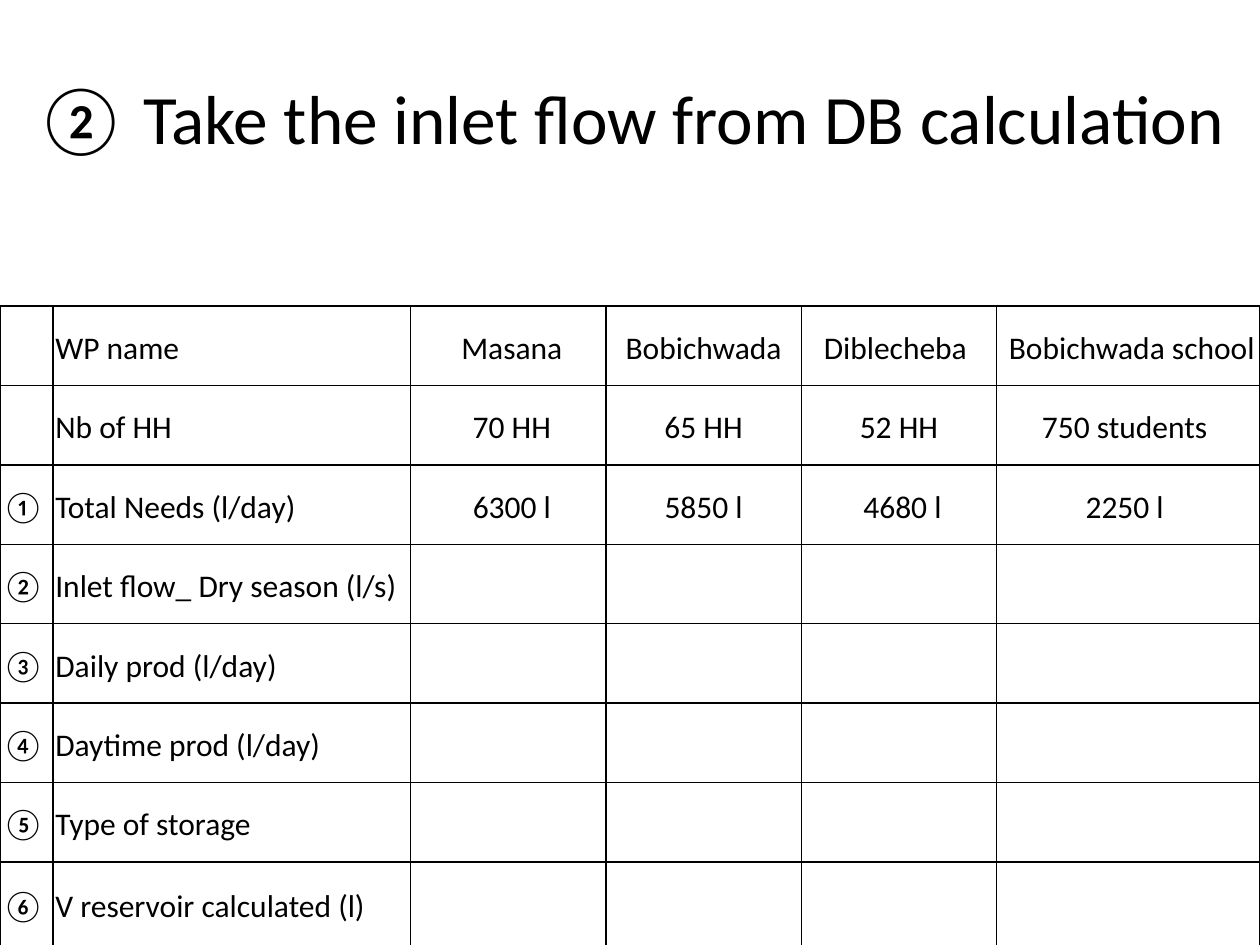
from dataclasses import dataclass

from lxml import etree
from pptx import Presentation
from pptx.dml.color import RGBColor
from pptx.enum.text import MSO_ANCHOR, MSO_AUTO_SIZE, PP_ALIGN
from pptx.oxml.ns import qn
from pptx.util import Inches, Pt

LEFT, CENTER = PP_ALIGN.LEFT, PP_ALIGN.CENTER
MIDDLE = MSO_ANCHOR.MIDDLE
NO_AUTOFIT = MSO_AUTO_SIZE.NONE
TITLE_ONLY = 5


@dataclass(frozen=True)
class Theme:
    font: str = "Calibri"
    ink: str = "000000"
    title_size: float = 39.6
    cell_size: float = 18
    border: float = 1


@dataclass(frozen=True)
class Row:
    number: str
    label: str
    values: tuple[str, ...] = ("",) * 4
    height: float = 0.63

    @property
    def texts(self) -> tuple[str, ...]:
        return (self.number, self.label, *self.values)


THEME = Theme()
COLUMN_WIDTHS = (0.42, 2.84, 1.55, 1.55, 1.55, 2.09)
ROWS = (
    Row("", "WP name", (" Masana", "Bobichwada", "Diblecheba ", " Bobichwada school")),
    Row("", "Nb of HH", (" 70 HH", "65 HH", "52 HH", "750 students ")),
    Row("①", "Total Needs (l/day)", (" 6300 l", "5850 l", " 4680 l", "2250 l ")),
    Row("②", "Inlet flow_ Dry season (l/s)"),
    Row("③", "Daily prod (l/day)"),
    Row("④", "Daytime prod (l/day)"),
    Row("⑤", "Type of storage"),
    Row("⑥", "V reservoir calculated (l)", height=0.67),
)


def write(tf, text: str, *, size: float, align=LEFT, line_spacing=None, after=None) -> None:
    p = tf.paragraphs[0]
    p.alignment = align
    p.line_spacing = line_spacing
    p.space_after = None if after is None else Pt(after)
    p.font.size = Pt(size)
    if text:
        r = p.add_run()
        r.text = text
        r.font.name = THEME.font
        r.font.size = Pt(size)
        r.font.color.rgb = RGBColor.from_string(THEME.ink)


def add_borders(cell) -> None:
    tc_pr = cell._tc.get_or_add_tcPr()
    for i, side in enumerate(("lnL", "lnR", "lnT", "lnB")):
        ln = etree.Element(qn(f"a:{side}"), w=str(Pt(THEME.border)))
        fill = etree.SubElement(ln, qn("a:solidFill"))
        etree.SubElement(fill, qn("a:srgbClr"), val=THEME.ink)
        tc_pr.insert(i, ln)


def format_cell(cell, text: str, align) -> None:
    cell.margin_left = cell.margin_right = Inches(0.02)
    cell.margin_top = cell.margin_bottom = 0
    cell.vertical_anchor = MIDDLE
    cell.fill.background()
    add_borders(cell)
    write(cell.text_frame, text, size=THEME.cell_size, align=align,
          line_spacing=1.15, after=6)


def add_title(s, text: str) -> None:
    sp = s.shapes.title
    sp.left, sp.top = Inches(0), Inches(0.3)
    sp.width, sp.height = Inches(10), Inches(1.25)
    tf = sp.text_frame
    tf.word_wrap = True
    tf.auto_size = NO_AUTOFIT
    tf.vertical_anchor = MIDDLE
    write(tf, text, size=THEME.title_size, align=CENTER)


def add_needs_table(s, rows: tuple[Row, ...]) -> None:
    height = sum(row.height for row in rows)
    table = s.shapes.add_table(len(rows), len(COLUMN_WIDTHS), Inches(0), Inches(2.43),
                               Inches(10), Inches(height)).table
    table.first_row = table.horz_banding = False
    for column, width in zip(table.columns, COLUMN_WIDTHS):
        column.width = Inches(width)
    for i, row in enumerate(rows):
        table.rows[i].height = Inches(row.height)
        for j, text in enumerate(row.texts):
            format_cell(table.cell(i, j), text, LEFT if j < 2 else CENTER)


def main() -> None:
    prs = Presentation()
    prs.slide_width, prs.slide_height = Inches(10), Inches(7.5)
    s = prs.slides.add_slide(prs.slide_layouts[TITLE_ONLY])
    add_title(s, "② Take the inlet flow from DB calculation")
    add_needs_table(s, ROWS)
    prs.save("out.pptx")


if __name__ == "__main__":
    main()
